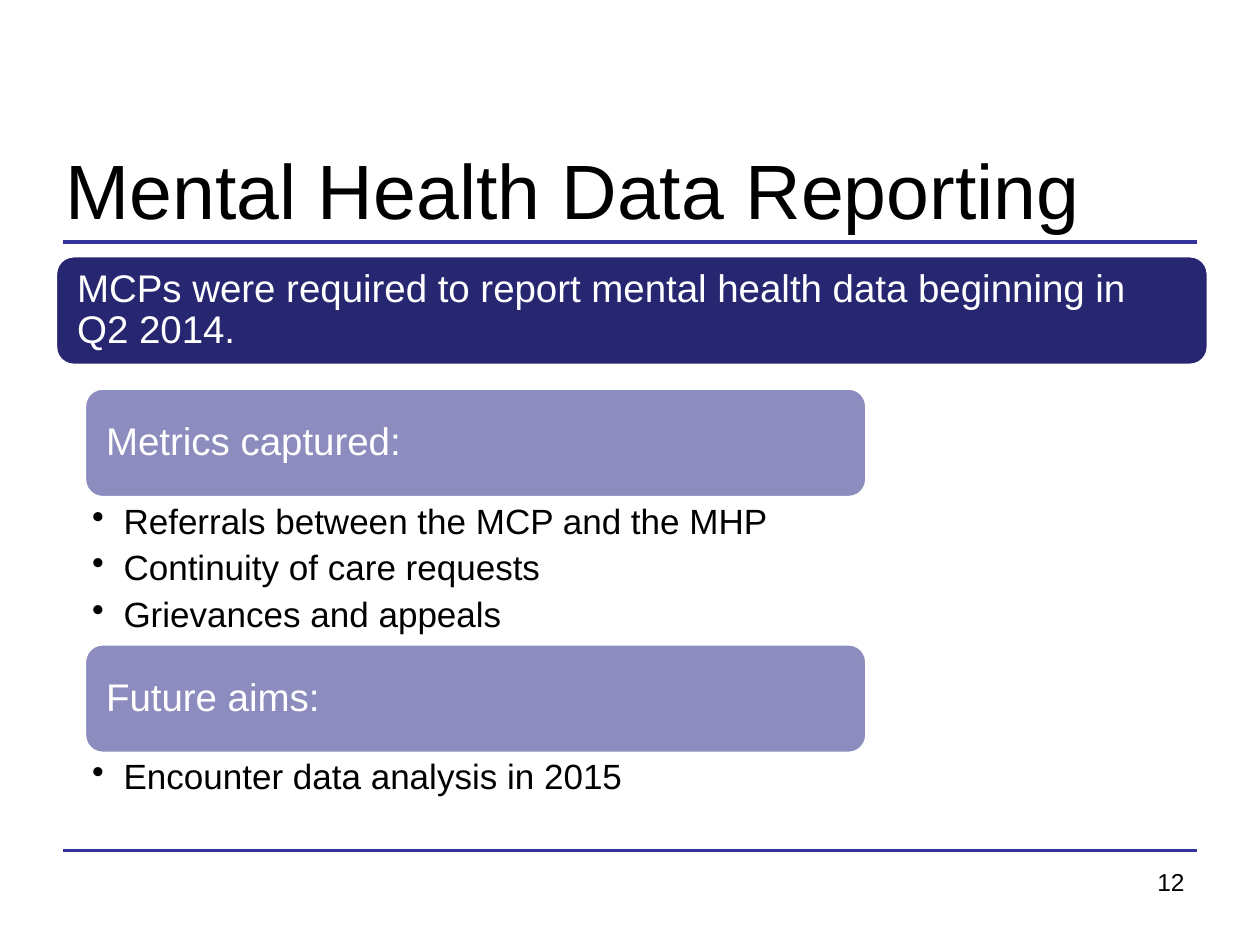
import pptx
import pptx.util
import pptx.dml.color
import pptx.enum.shapes
import pptx.enum.text
import pptx.oxml.ns
from lxml import etree
from pptx.util import Inches, Pt

COLORS = {"rule": "333399", "main": "262671", "section": "8C8CBF",
          "light": "FFFFFF", "dark": "000000"}
FONT = "Arial"
ANCHOR = pptx.enum.text.MSO_ANCHOR
ALIGN = pptx.enum.text.PP_ALIGN


def color(name):
    return pptx.dml.color.RGBColor.from_string(COLORS[name])


def format_text(paragraph, size, color_name, align=ALIGN.LEFT):
    paragraph.alignment = align
    for run in paragraph.runs:
        run.font.size = Pt(size)
        run.font.name = FONT
        run.font.color.rgb = color(color_name)


def set_frame(frame, anchor, left=0.1, top=0.05, right=0.1, bottom=0.05):
    frame.word_wrap = True
    frame.vertical_anchor = anchor
    frame.margin_left, frame.margin_top = Inches(left), Inches(top)
    frame.margin_right, frame.margin_bottom = Inches(right), Inches(bottom)


def add_rule(slide, left, top, width):
    connector = slide.shapes.add_connector(
        pptx.enum.shapes.MSO_CONNECTOR.STRAIGHT,
        Inches(left), Inches(top), Inches(left + width), Inches(top))
    connector.line.color.rgb = color("rule")
    connector.line.width = Pt(2.25)
    properties = connector._element.spPr
    etree.SubElement(properties, pptx.oxml.ns.qn("a:effectLst"))


def add_title(slide, left, top, width, height, text):
    title = slide.shapes.title
    title.left, title.top = Inches(left), Inches(top)
    title.width, title.height = Inches(width), Inches(height)
    title.text_frame.text = text
    set_frame(title.text_frame, ANCHOR.MIDDLE)
    format_text(title.text_frame.paragraphs[0], 44, "dark")


def add_page_number(slide, left, top, width, height, text):
    box = slide.shapes.add_textbox(
        Inches(left), Inches(top), Inches(width), Inches(height))
    box.text_frame.text = text
    set_frame(box.text_frame, ANCHOR.TOP)
    format_text(box.text_frame.paragraphs[0], 14, "dark", ALIGN.RIGHT)


def add_banner(slide, left, top, width, height, text, fill):
    shape = slide.shapes.add_shape(
        pptx.enum.shapes.MSO_SHAPE.ROUNDED_RECTANGLE,
        Inches(left), Inches(top), Inches(width), Inches(height))
    shape.shadow.inherit = False
    shape.fill.solid()
    shape.fill.fore_color.rgb = color(fill)
    shape.line.color.rgb = color("light")
    shape.line.width = Pt(2)
    shape.text_frame.text = text
    set_frame(shape.text_frame, ANCHOR.MIDDLE, 0.13, 0.09, 0.13, 0.09)
    paragraph = shape.text_frame.paragraphs[0]
    paragraph.line_spacing = 0.9
    format_text(paragraph, 22, "light")


def add_bullets(slide, left, top, width, height, items):
    box = slide.shapes.add_textbox(
        Inches(left), Inches(top), Inches(width), Inches(height))
    frame = box.text_frame
    set_frame(frame, ANCHOR.TOP, 0.29, 0.03, 0.16, 0.03)
    frame.text = "\n".join(items)
    for paragraph in frame.paragraphs:
        properties = paragraph._p.get_or_add_pPr()
        properties.set("marL", str(Inches(0.25)))
        properties.set("indent", str(Inches(-0.25)))
        bullet = etree.SubElement(properties, pptx.oxml.ns.qn("a:buChar"))
        bullet.set("char", "•")
        paragraph.line_spacing = 0.9
        paragraph.space_after = Pt(5)
        format_text(paragraph, 20, "dark")


def add_section(slide, left, top, width, heading, items):
    """Heading banner with its bullets below."""
    height = 0.87
    add_banner(slide, left + 0.23, top, 6.21, height, heading, "section")
    add_bullets(slide, left, top + height + 0.02, width, 1.14, items)


def main():
    presentation = pptx.Presentation()
    presentation.slide_width, presentation.slide_height = Inches(10), Inches(7.5)
    slide = presentation.slides.add_slide(presentation.slide_layouts[5])

    # Frame: rules, title and page number
    for top in (1.92, 6.75):
        add_rule(slide, 0.5, top, 9)
    add_title(slide, 0.42, 1, 9, 1, "Mental Health Data Reporting")
    add_page_number(slide, 7.17, 6.83, 2.33, 0.52, "12")

    # Body: main statement and its two sections
    left, width = 0.44, 9.15
    add_banner(slide, left, 2.03, width, 0.87,
               "MCPs were required to report mental health data "
               "beginning in Q2 2014.", "main")
    add_section(slide, left, 3.08, width, "Metrics captured:",
                ["Referrals between the MCP and the MHP",
                 "Continuity of care requests", "Grievances and appeals"])
    add_section(slide, left, 5.11, width, "Future aims:",
                ["Encounter data analysis in 2015"])

    presentation.save("out.pptx")


if __name__ == "__main__":
    main()
